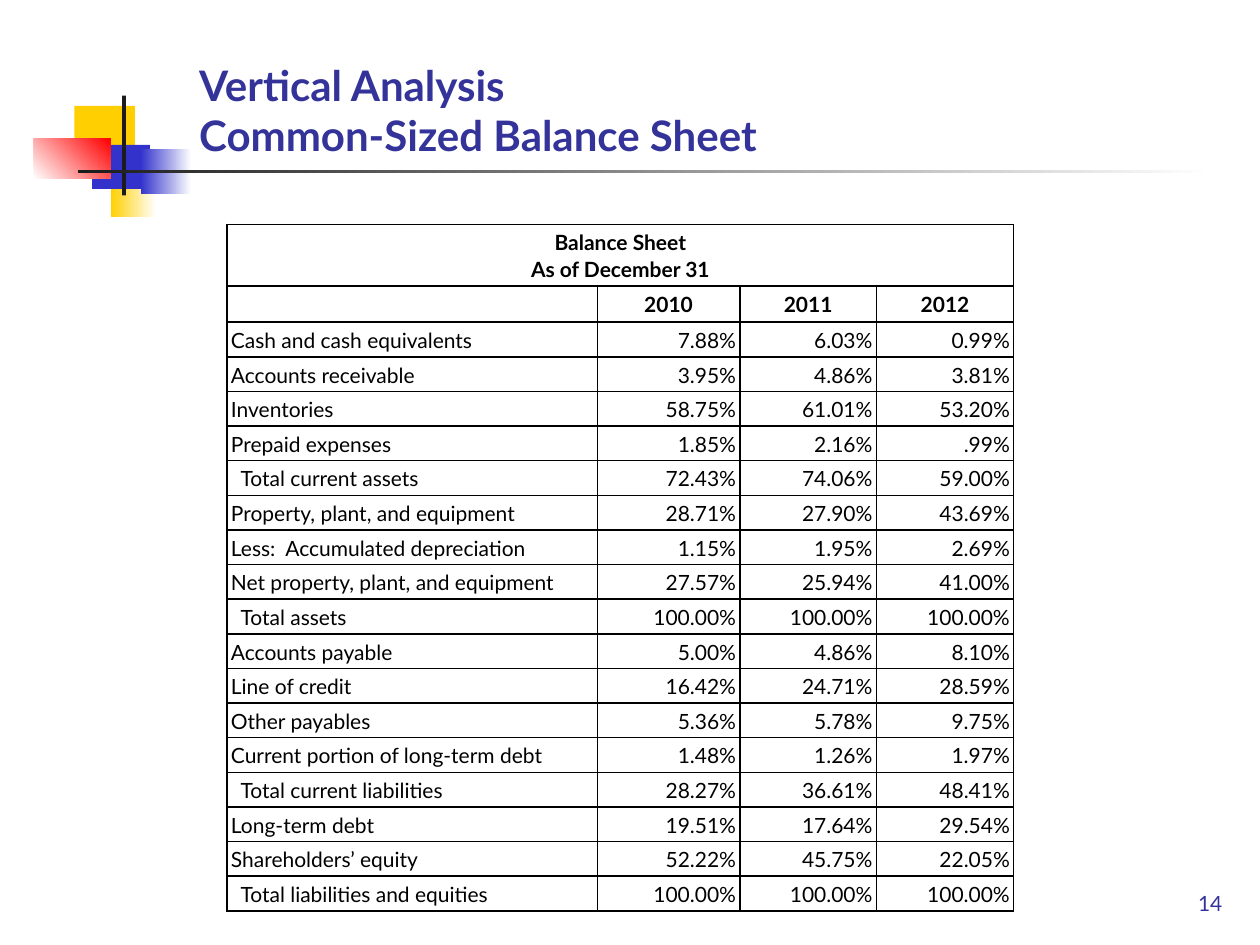
from lxml import etree
from pptx import Presentation
from pptx import util as u
from pptx.dml.color import RGBColor
from pptx.enum import shapes, text
from pptx.oxml import ns

WHITE = RGBColor(0xFF, 0xFF, 0xFF)
BLACK = RGBColor(0, 0, 0)
YELLOW = RGBColor(0xFF, 0xCF, 0x01)
BLUE = RGBColor(0x33, 0x33, 0xCC)
RED = RGBColor(0xFF, 0, 0)
CHARCOAL = RGBColor(0x1C, 0x1C, 0x1C)
NAVY = RGBColor(0x33, 0x33, 0x99)

LEFT, CENTER, RIGHT = text.PP_ALIGN.LEFT, text.PP_ALIGN.CENTER, text.PP_ALIGN.RIGHT

HEADING = ["Balance Sheet", "As of December 31"]
YEARS = ["2010", "2011", "2012"]
BALANCES = [
    ("Cash and cash equivalents", "7.88%", "6.03%", "0.99%"),
    ("Accounts receivable", "3.95%", "4.86%", "3.81%"),
    ("Inventories", "58.75%", "61.01%", "53.20%"),
    ("Prepaid expenses", "1.85%", "2.16%", ".99%"),
    ("Total current assets", "72.43%", "74.06%", "59.00%"),
    ("Property, plant, and equipment", "28.71%", "27.90%", "43.69%"),
    ("Less:  Accumulated depreciation", "1.15%", "1.95%", "2.69%"),
    ("Net property, plant, and equipment", "27.57%", "25.94%", "41.00%"),
    ("Total assets", "100.00%", "100.00%", "100.00%"),
    ("Accounts payable", "5.00%", "4.86%", "8.10%"),
    ("Line of credit", "16.42%", "24.71%", "28.59%"),
    ("Other payables", "5.36%", "5.78%", "9.75%"),
    ("Current portion of long-term debt", "1.48%", "1.26%", "1.97%"),
    ("Total current liabilities", "28.27%", "36.61%", "48.41%"),
    ("Long-term debt", "19.51%", "17.64%", "29.54%"),
    ("Shareholders’ equity", "52.22%", "45.75%", "22.05%"),
    ("Total liabilities and equities", "100.00%", "100.00%", "100.00%"),
]

COLUMN_WIDTHS = [211.5, 81.5, 78, 78.5]
ROW_HEIGHTS = [35.2, 20.7] + [19.7] * len(BALANCES)


class SlideBuilder:
    font = "Lato"
    body_size = 12
    title_size = 24
    cell_inset = 2.2
    total_indent = 5.5
    line_spacing = 1.07

    def __init__(self, slide):
        self.slide = slide

    def run(self, paragraph, words, size, color, bold=False):
        run = paragraph.add_run()
        run.text = words
        run.font.name = self.font
        run.font.size = u.Pt(size)
        run.font.bold = bold
        run.font.color.rgb = color

    def title(self, lines, left, top, width, height):
        title = self.slide.shapes.title
        title.left, title.top, title.width, title.height = map(u.Pt, (left, top, width, height))
        frame = title.text_frame
        frame.word_wrap = True
        frame.auto_size = text.MSO_AUTO_SIZE.NONE
        frame.vertical_anchor = text.MSO_ANCHOR.BOTTOM
        paragraph = frame.paragraphs[0]
        paragraph.alignment = LEFT
        paragraph.line_spacing = 1
        for index, line in enumerate(lines):
            if index:
                paragraph.add_line_break()
            self.run(paragraph, line, self.title_size, NAVY, bold=True)

    def page_number(self, number, left, top, width, height):
        frame = self.slide.shapes.add_textbox(*map(u.Pt, (left, top, width, height))).text_frame
        frame.word_wrap = True
        frame.vertical_anchor = text.MSO_ANCHOR.BOTTOM
        frame.paragraphs[0].alignment = RIGHT
        self.run(frame.paragraphs[0], number, self.body_size, NAVY)

    def block(self, left, top, width, height, color, fade_to=None, angle=0):
        """Add a borderless rectangle, solid or fading to a second colour."""
        block = self.slide.shapes.add_shape(
            shapes.MSO_SHAPE.RECTANGLE, *map(u.Pt, (left, top, width, height)))
        block.shadow.inherit = False
        block.line.fill.background()
        if fade_to is None:
            block.fill.solid()
            block.fill.fore_color.rgb = color
        else:
            block.fill.gradient()
            block.fill.gradient_angle = angle
            for stop, shade in zip(block.fill.gradient_stops, (color, fade_to)):
                stop.color.rgb = shade

    def table(self, left, top, column_widths, row_heights):
        table = self.slide.shapes.add_table(
            len(row_heights), len(column_widths), u.Pt(left), u.Pt(top),
            u.Pt(sum(column_widths)), u.Pt(sum(row_heights))).table
        table.first_row = table.horz_banding = False
        for column, width in zip(table.columns, column_widths):
            column.width = u.Pt(width)
        for row, height in zip(table.rows, row_heights):
            row.height = u.Pt(height)
        for cell in table.iter_cells():
            cell.fill.background()
            self.border(cell)
        return table

    def border(self, cell):
        properties = cell._tc.get_or_add_tcPr()
        for index, side in enumerate(("a:lnL", "a:lnR", "a:lnT", "a:lnB")):
            line = etree.Element(ns.qn(side), w=str(u.Pt(1)))
            fill = etree.SubElement(line, ns.qn("a:solidFill"))
            etree.SubElement(fill, ns.qn("a:srgbClr"), val=str(BLACK))
            properties.insert(index, line)

    def cell(self, cell, lines, alignment, bold=False, indent=0):
        cell.margin_top = cell.margin_right = cell.margin_bottom = u.Pt(self.cell_inset)
        cell.margin_left = u.Pt(self.cell_inset + indent)
        frame = cell.text_frame
        for index, line in enumerate(lines):
            paragraph = frame.add_paragraph() if index else frame.paragraphs[0]
            paragraph.alignment = alignment
            paragraph.line_spacing = self.line_spacing
            self.run(paragraph, line, self.body_size, BLACK, bold)

    def empty_cell(self, cell):
        """Keep an empty cell from growing its row with the default text size."""
        self.cell(cell, [], LEFT)
        etree.SubElement(cell.text_frame.paragraphs[0]._p, ns.qn("a:endParaRPr"),
                         sz=str(self.body_size * 100))


def add_ornament(builder):
    builder.block(63.4, 86.4, 25.9, 37.4, YELLOW, WHITE)
    builder.block(42.5, 60.5, 34.6, 25.2, YELLOW)
    builder.block(52.6, 82.8, 33.1, 25.2, BLUE)
    builder.block(80.6, 85, 28.8, 25.9, BLUE, WHITE)
    builder.block(19.4, 79.2, 43.9, 23, WHITE, RED, angle=45)
    builder.block(69.8, 54.7, 2.2, 56.9, CHARCOAL)
    builder.block(44.6, 97.2, 648, 1.6, CHARCOAL, WHITE)


def add_balance_sheet(builder):
    table = builder.table(129.8, 128.2, COLUMN_WIDTHS, ROW_HEIGHTS)
    table.cell(0, 0).merge(table.cell(0, len(YEARS)))
    builder.cell(table.cell(0, 0), HEADING, CENTER, bold=True)
    builder.empty_cell(table.cell(1, 0))
    for column, year in enumerate(YEARS, 1):
        builder.cell(table.cell(1, column), [year], CENTER, bold=True)
    for row, (account, *shares) in enumerate(BALANCES, 2):
        indent = builder.total_indent if account.startswith("Total") else 0
        builder.cell(table.cell(row, 0), [account], LEFT, indent=indent)
        for column, share in enumerate(shares, 1):
            builder.cell(table.cell(row, column), [share], RIGHT)


def main():
    deck = Presentation()
    deck.slide_width, deck.slide_height = u.Pt(720), u.Pt(540)
    builder = SlideBuilder(deck.slides.add_slide(deck.slide_layouts[5]))
    add_ornament(builder)
    builder.title(["Vertical Analysis", "Common-Sized Balance Sheet"], 106.6, 57.6, 491, 37.4)
    builder.page_number("14", 541.4, 491, 164.2, 36)
    add_balance_sheet(builder)
    deck.save("out.pptx")


if __name__ == "__main__":
    main()
